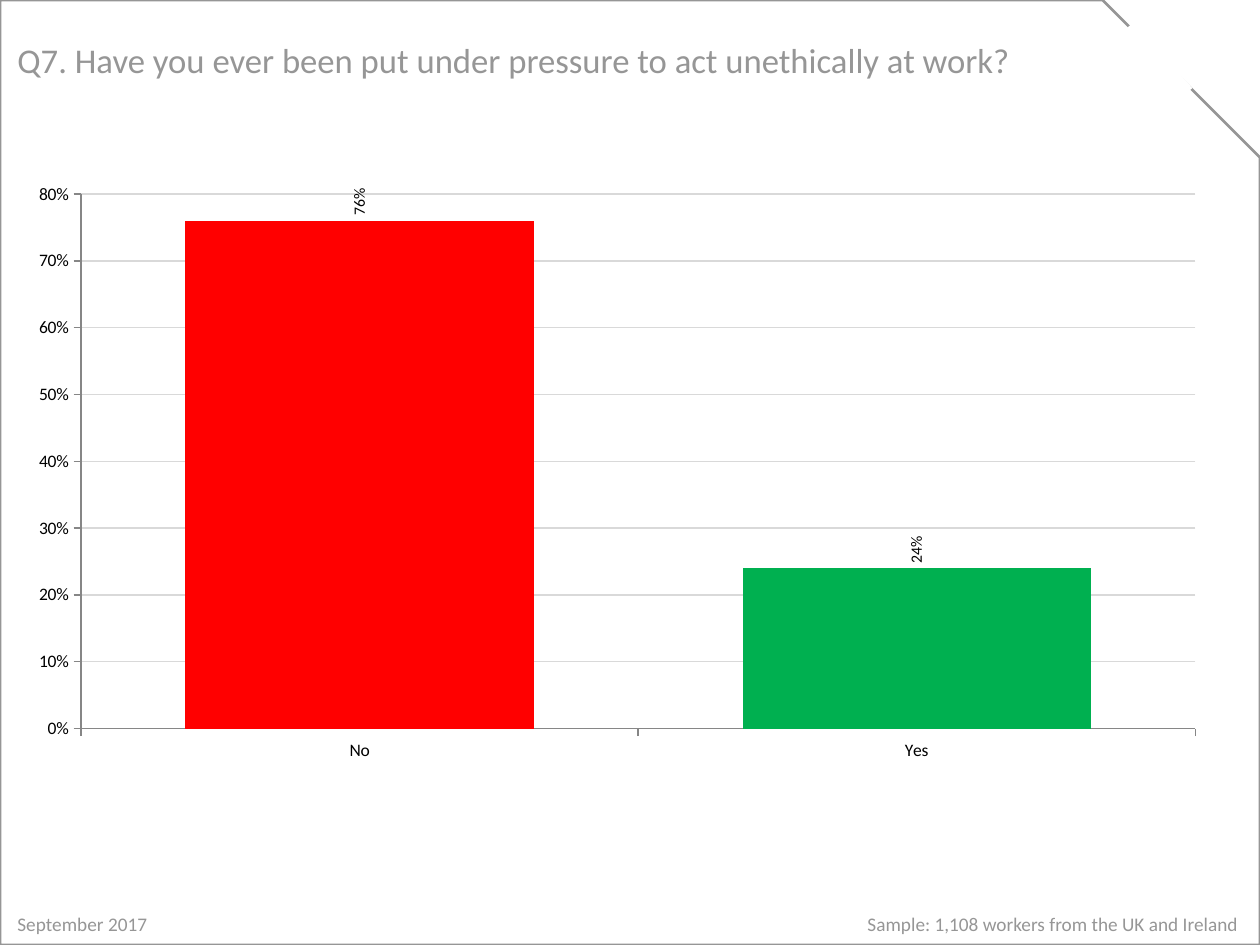
from lxml.etree import SubElement
from pptx import Presentation
from pptx.chart.data import CategoryChartData
from pptx.dml.color import RGBColor
from pptx.enum.chart import XL_CHART_TYPE as ChartType, XL_LABEL_POSITION as LabelPosition
from pptx.enum.chart import XL_TICK_MARK as TickMark
from pptx.enum.shapes import MSO_CONNECTOR as Connector, MSO_SHAPE as Shape
from pptx.enum.text import MSO_ANCHOR as Anchor
from pptx.oxml import parse_xml
from pptx.oxml.ns import nsdecls, qn
from pptx.util import Inches, Pt

COLOURS = {
    "grey": "969696",
    "white": "FFFFFF",
    "black": "000000",
    "grid": "D9D9D9",
    "axis": "868686",
    "no": "FF0000",
    "yes": "00B050",
}


class SurveySlide:
    """Draws survey elements on a grid of 100 columns by 75 rows."""

    font_name = "Calibri"
    cell = Inches(0.1)

    def __init__(self, deck):
        self.slide = deck.slides.add_slide(deck.slide_layouts[6])
        self.shapes = self.slide.shapes

    def grid(self, *cells):
        return [round(self.cell * count) for count in cells]

    def colour(self, name):
        return RGBColor.from_string(COLOURS[name])

    def style_font(self, font, size, colour):
        font.name, font.size = self.font_name, Pt(size)
        font.color.rgb = self.colour(colour)

    def style_line(self, line, width, colour):
        line.width = Pt(width)
        line.color.rgb = self.colour(colour)

    def text(self, area, wording, size, anchor=Anchor.TOP, spacing=None, right_tab=None):
        frame = self.shapes.add_textbox(*self.grid(*area)).text_frame
        frame.word_wrap = True
        frame.vertical_anchor = anchor
        paragraph = frame.paragraphs[0]
        paragraph.text = wording
        paragraph.line_spacing = spacing
        if right_tab:
            properties = paragraph._p.get_or_add_pPr()
            tabs = SubElement(properties, qn("a:tabLst"))
            SubElement(tabs, qn("a:tab"), pos=str(self.grid(right_tab)[0]), algn="r")
        self.style_font(paragraph.font, size, "grey")

    def frame(self, area):
        border = self.shapes.add_shape(Shape.SNIP_1_RECTANGLE, *self.grid(*area))
        border.shadow.inherit = False
        border.fill.background()
        self.style_line(border.line, 1.5, "grey")

    def line(self, ends, width, colour):
        stroke = self.shapes.add_connector(Connector.STRAIGHT, *self.grid(*ends))
        self.style_line(stroke.line, width, colour)
        SubElement(stroke.element.find(qn("p:spPr")), qn("a:effectLst"))

    def axis(self, axis):
        axis.major_tick_mark = TickMark.OUTSIDE
        axis.minor_tick_mark = TickMark.NONE
        self.style_line(axis.format.line, 0.75, "axis")
        self.style_font(axis.tick_labels.font, 10, "black")

    def column_chart(self, area, plot_share, answers):
        chart_data = CategoryChartData(number_format="0%")
        chart_data.categories = [answer.capitalize() for answer in answers]
        chart_data.add_series("Series 1", answers.values())
        chart = self.shapes.add_chart(
            ChartType.COLUMN_CLUSTERED, *self.grid(*area), chart_data
        ).chart
        chart.has_title = chart.has_legend = False
        self.style_font(chart.font, 10, "black")
        self.axis(chart.category_axis)

        percentages = chart.value_axis
        self.axis(percentages)
        percentages.minimum_scale, percentages.maximum_scale = 0, 0.8
        percentages.major_unit = 0.1
        percentages.tick_labels.number_format = "0%"
        percentages.tick_labels.number_format_is_linked = False
        percentages.has_major_gridlines = True
        self.style_line(percentages.major_gridlines.format.line, 0.75, "grid")

        plot = chart.plots[0]
        plot.gap_width = 60
        plot.vary_by_categories = False
        responses = plot.series[0]
        for index, answer in enumerate(answers):
            fill = responses.points[index].format.fill
            fill.solid()
            fill.fore_color.rgb = self.colour(answer)

        labels = responses.data_labels
        labels.show_value = True
        labels.position = LabelPosition.OUTSIDE_END
        labels.number_format = "0%"
        labels.number_format_is_linked = False
        self.style_font(labels.font, 9, "black")
        label_path = "/".join(map(qn, ("c:dLbls", "c:txPr", "a:bodyPr")))
        label_body = chart.element.find(".//" + label_path)
        label_body.set("rot", "-5400000")
        label_body.set("vert", "horz")
        self.place_plot(chart, plot_share)

    def place_plot(self, chart, plot_share):
        plot_area = chart.element.find(".//" + qn("c:plotArea"))
        for automatic in plot_area.findall(qn("c:layout")):
            plot_area.remove(automatic)
        layout = parse_xml(f"<c:layout {nsdecls('c')}/>")
        manual = SubElement(layout, qn("c:manualLayout"))
        settings = {"layoutTarget": "inner", "xMode": "edge", "yMode": "edge"}
        settings.update(zip("xywh", plot_share))
        for tag, value in settings.items():
            SubElement(manual, qn(f"c:{tag}"), val=str(value))
        plot_area.insert(0, layout)


def main():
    deck = Presentation()
    deck.slide_width, deck.slide_height = Inches(10), Inches(7.5)
    survey = SurveySlide(deck)
    survey.text(
        (0.4, 71.9, 99.4, 2.9),
        "September 2017\tSample: 1,108 workers from the UK and Ireland",
        11,
        right_tab=96.9,
    )
    survey.frame((0, 0, 100, 75))
    survey.line((89.7, 2, 94.4, 7.2), 4.5, "white")
    survey.text(
        (0.4, 1.6, 88.1, 6.7),
        "Q7. Have you ever been put under pressure to act unethically at work?",
        19.8,
        anchor=Anchor.MIDDLE,
        spacing=0.9,
    )
    survey.column_chart(
        (2.7, 13.8, 93.1, 53.7), (0.04, 0.03, 0.95, 0.79), {"no": 0.76, "yes": 0.24}
    )
    deck.save("out.pptx")


if __name__ == "__main__":
    main()
